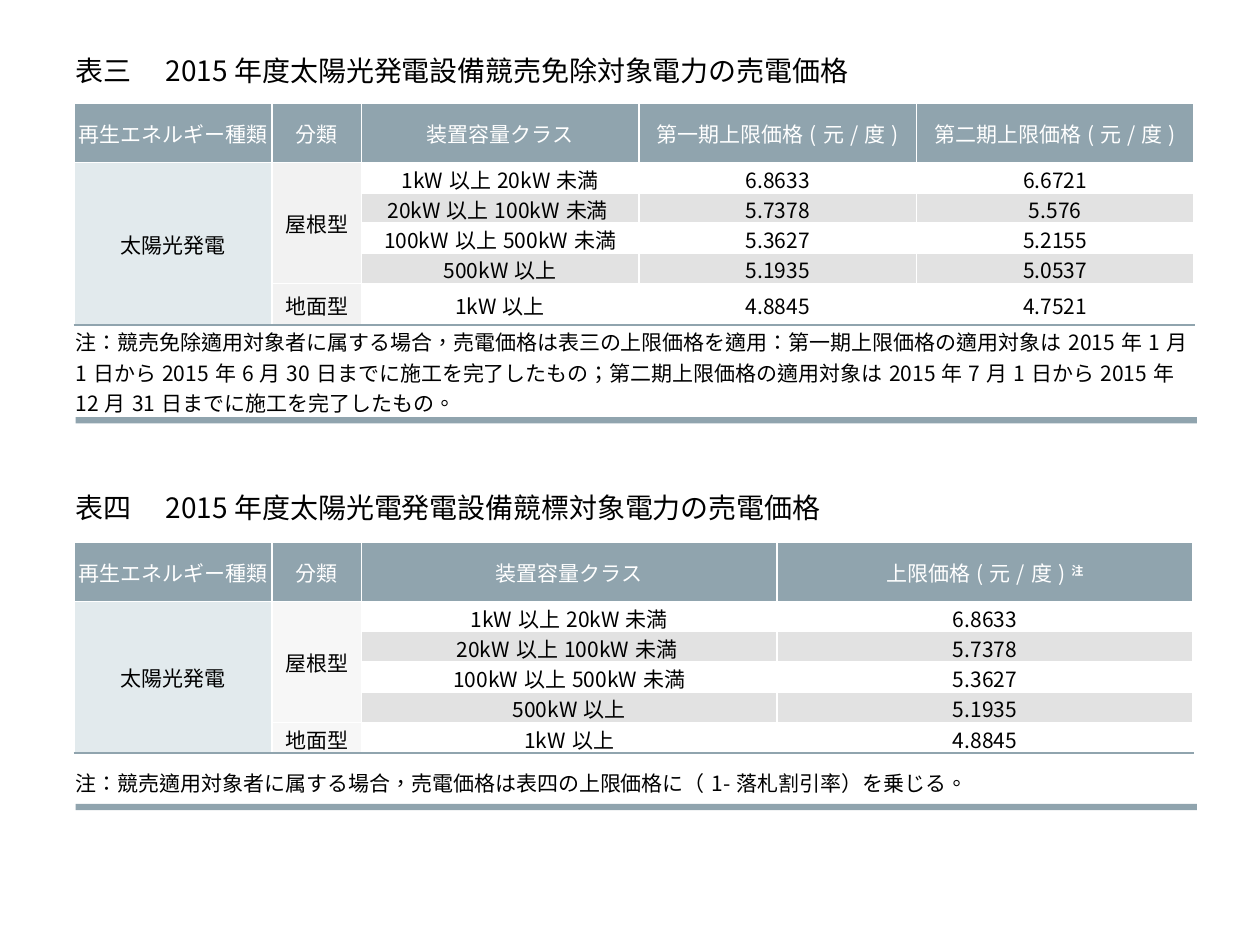
from lxml import etree
from pptx import Presentation
from pptx.dml.color import RGBColor
from pptx.enum import shapes, text
from pptx.oxml.ns import qn
from pptx.util import Pt

FONT = "Noto Sans CJK SC"
SLATE, WHITE, BLACK = "90A4AE", "FFFFFF", "000000"
CENTER, LEFT, JUSTIFY = text.PP_ALIGN.CENTER, text.PP_ALIGN.LEFT, text.PP_ALIGN.JUSTIFY


def paint(target, color):
    if hasattr(target, "solid"):
        target.solid()
        target = target.fore_color
    target.rgb = RGBColor.from_string(color)


def style_span(span, size, color):
    span.font.size = Pt(size)
    span.font.name = FONT
    paint(span.font.color, color)
    props = span.font._element
    props.set("lang", "zh-TW")
    etree.SubElement(props, qn("a:ea"), typeface=FONT)


deck = Presentation()
deck.slide_width, deck.slide_height = Pt(720), Pt(540)
page = deck.slides.add_slide(deck.slide_layouts[6])

classes = ["1kW以上20kW未満", "20kW以上100kW未満 ", "100kW以上500kW未満", "500kW以上", "1kW以上"]
first_prices = ["6.8633", "5.7378", "5.3627", "5.1935", "4.8845"]
second_prices = ["6.6721", "5.576", "5.2155", "5.0537", "4.7521"]

sections = [
    {
        "title": "表三\u30002015年度太陽光発電設備競売免除対象電力の売電価格",
        "title_top": 25.9, "table_top": 59.1, "bar_top": 238.3,
        "headers": ["第一期上限価格(元/度)", "第二期上限価格(元/度)"],
        "prices": [first_prices, second_prices],
        "widths": [113, 51, 158.6, 158.6, 158.6],
        "last_heights": [23.8, 52.6],
        "type_fill": "F2F2F2", "note_align": LEFT, "mark": "",
        "note": "注：競売免除適用対象者に属する場合，売電価格は表三の上限価格を適用："
                "第一期上限価格の適用対象は2015年1月1日から2015年6月30日までに施工を完了したもの；"
                "第二期上限価格の適用対象は2015年7月1日から2015年12月31日までに施工を完了したもの。",
    },
    {
        "title": "表四\u30002015年度太陽光電発電設備競標対象電力の売電価格",
        "title_top": 275.8, "table_top": 309.9, "bar_top": 459.4,
        "headers": ["上限価格(元/度)"],
        "prices": [first_prices],
        "widths": [113, 51, 237.6, 237.6],
        "last_heights": [17.3, 33.1],
        "type_fill": "F7F7F7", "note_align": JUSTIFY, "mark": "注",
        "note": "注：競売適用対象者に属する場合，売電価格は表四の上限価格に（1-落札割引率）を乗じる。",
    },
]

for section in sections:
    box = page.shapes.add_textbox(Pt(36), Pt(section["title_top"]), Pt(648), Pt(28.1))
    box.text_frame.word_wrap = True
    box.text_frame.vertical_anchor = text.MSO_ANCHOR.MIDDLE
    box.text_frame.text = section["title"]
    style_span(box.text_frame.paragraphs[0].runs[0], 16, BLACK)

    widths = section["widths"]
    heights = [33.8] + [17.3] * 4 + section["last_heights"]
    grid = page.shapes.add_table(len(heights), len(widths), Pt(42.5), Pt(section["table_top"]),
                                 Pt(sum(widths)), Pt(sum(heights))).table
    grid.first_row = grid.horz_banding = False
    for column, width in zip(grid.columns, widths):
        column.width = Pt(width)
    for row, height in zip(grid.rows, heights):
        row.height = Pt(height)

    grid.cell(1, 0).merge(grid.cell(5, 0))
    grid.cell(1, 1).merge(grid.cell(4, 1))
    grid.cell(6, 0).merge(grid.cell(6, len(widths) - 1))

    rows = [["再生エネルギー種類", "分類", "装置容量クラス"] + section["headers"]]
    for index, values in enumerate(zip(classes, *section["prices"])):
        energy = "太陽光発電" if index == 0 else ""
        kind = {0: "屋根型", 4: "地面型"}.get(index, "")
        rows.append([energy, kind, *values])
    rows.append([section["note"]] + [""] * (len(widths) - 1))

    for r, words in enumerate(rows):
        for c, word in enumerate(words):
            cell = grid.cell(r, c)
            cell.margin_left = cell.margin_top = cell.margin_right = Pt(0.72)
            cell.margin_bottom = Pt(0)
            cell.vertical_anchor = text.MSO_ANCHOR.MIDDLE

            if r == 0:
                fill = SLATE
            elif r == 6:
                fill = WHITE
            elif c < 2:
                fill = ["E2EAED", section["type_fill"]][c]
            else:
                fill = "E2E2E2" if r in (2, 4) else WHITE

            edges = dict.fromkeys(["lnL", "lnR", "lnT", "lnB"], WHITE)
            if r == 5 or (r, c) == (1, 0):
                edges["lnB"] = SLATE
            if r == 6:
                edges["lnT"] = SLATE
            for edge, color in edges.items():
                line = etree.SubElement(cell._tc.get_or_add_tcPr(), qn("a:" + edge), w="12700")
                solid = etree.SubElement(line, qn("a:solidFill"))
                etree.SubElement(solid, qn("a:srgbClr"), val=color)
            paint(cell.fill, fill)

            if word:
                cell.text_frame.text = word
                para = cell.text_frame.paragraphs[0]
                para.alignment = section["note_align"] if r == 6 else CENTER
                ink = WHITE if r == 0 else BLACK
                style_span(para.runs[0], 12, ink)

    if section["mark"]:
        span = grid.cell(0, len(widths) - 1).text_frame.paragraphs[0].add_run()
        span.text = section["mark"]
        style_span(span, 12, WHITE)
        span.font.bold = True
        span.font._element.set("baseline", "30000")

    bar = page.shapes.add_shape(shapes.MSO_SHAPE.RECTANGLE, Pt(43.2), Pt(section["bar_top"]),
                                Pt(640.8), Pt(3.6))
    bar.shadow.inherit = False
    paint(bar.fill, SLATE)
    bar.line.fill.background()

deck.save("out.pptx")
